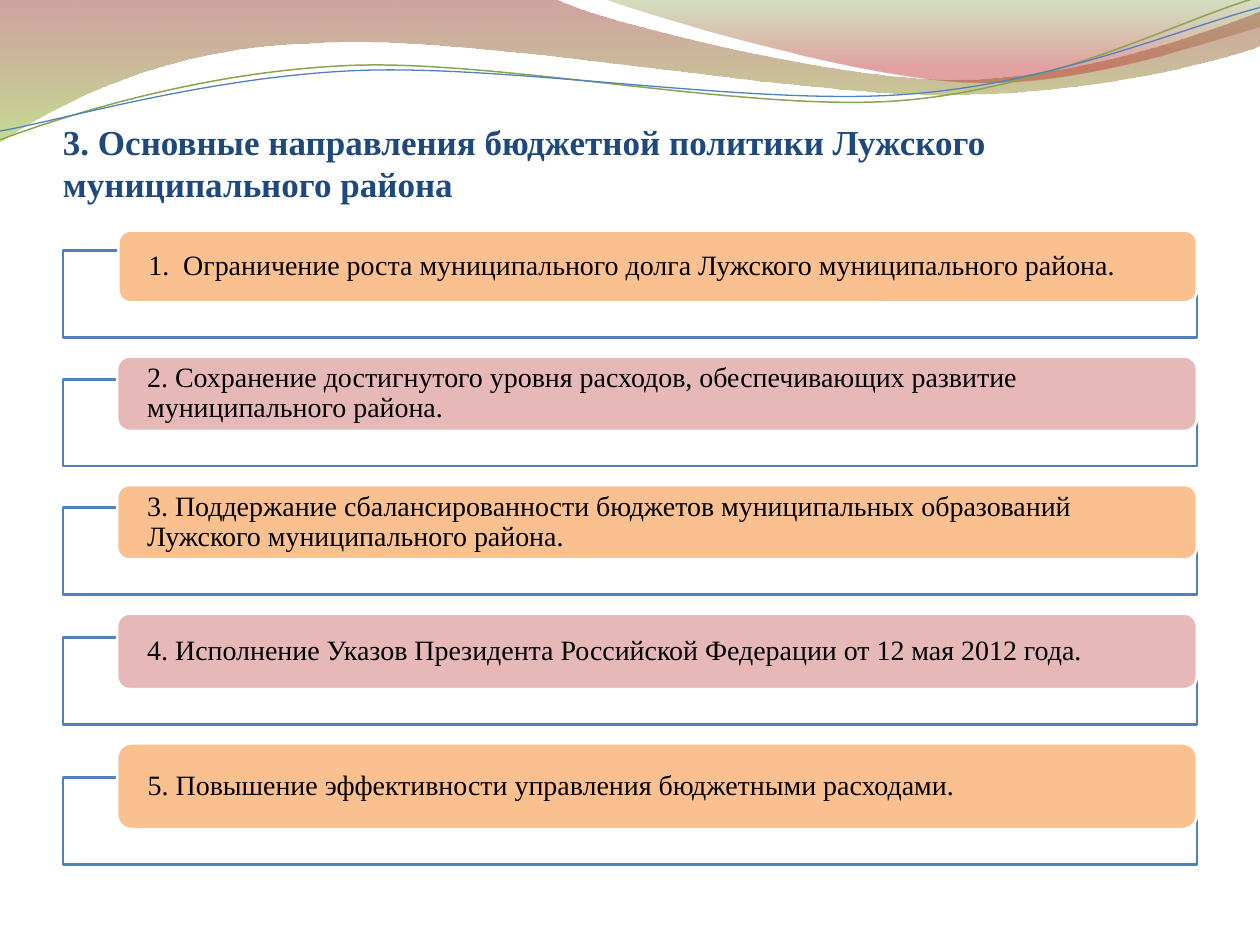
from math import cos, radians, sin

from lxml.etree import SubElement
from pptx import Presentation
from pptx.dml.color import RGBColor
from pptx.enum.shapes import MSO_SHAPE
from pptx.enum.text import MSO_ANCHOR, PP_ALIGN
from pptx.oxml.ns import qn
from pptx.util import Inches, Pt

FONT = "Times New Roman"
NAVY = RGBColor(0x1F, 0x49, 0x7D)
BLUE = RGBColor(0x4F, 0x81, 0xBD)
GREEN = RGBColor(0x89, 0xA5, 0x4F)
ORANGE = RGBColor(0xFA, 0xC0, 0x90)
PINK = RGBColor(0xE6, 0xB9, 0xB8)
WHITE = RGBColor(0xFF, 0xFF, 0xFF)
BLACK = RGBColor(0, 0, 0)

# Gradient stops: position in percent, colour, opacity in percent
LEFT_WAVE_STOPS = [(0, RGBColor(0x97, 0x33, 0x30), 45), (100, RGBColor(0x95, 0xC2, 0x38), 55)]
RIGHT_WAVE_STOPS = [(0, RGBColor(0x76, 0x95, 0x37), 30), (80, RGBColor(0xBE, 0x33, 0x30), 45)]

# Outlines in inches: a pair is a straight step, six numbers are a Bezier step
LEFT_WAVE = [
    (0, 0), (4.4, -0.01), (4.76, 0.17, 6.64, 0.63, 7.58, 0.63),
    (8.53, 0.63, 9.58, 0.26, 10, 0.09), (10.01, 0.36),
    (9.83, 0.44, 8.7, 0.76, 7.46, 0.75), (6.22, 0.75, 3.82, 0.28, 2.57, 0.34),
    (1.29, 0.36, 0.46, 0.83, -0.01, 1.13),
]
RIGHT_WAVE = [
    (4.79, -0.01), (5.09, 0.11, 6.82, 0.62, 7.69, 0.65),
    (8.56, 0.69, 9.61, 0.32, 10, 0.21), (10, 0),
]
GREEN_CURVE = [
    (0, 1.11), (0.48, 0.93, 1.58, 0.57, 2.77, 0.52),
    (3.95, 0.47, 5.93, 0.89, 7.13, 0.8), (8.33, 0.71, 9.38, 0.15, 9.98, -0.02),
]
BLUE_CURVE = [
    (0, 1.04), (0.47, 0.96, 1.64, 0.61, 2.83, 0.56),
    (4.03, 0.51, 5.97, 0.84, 7.17, 0.75), (8.36, 0.67, 9.41, 0.21, 10, 0.06),
]
CURVE_TILT = -2.7
CURVE_CENTER = (4.99, 0.58)

TITLE = "3. Основные направления бюджетной политики Лужского муниципального района"
# Card left, height, colour and wording
DIRECTIONS = [
    (0.94, 0.57, ORANGE, "1.  Ограничение роста муниципального долга Лужского муниципального района."),
    (0.93, 0.59, PINK, "2. Сохранение достигнутого уровня расходов, обеспечивающих развитие муниципального района."),
    (0.93, 0.59, ORANGE, "3. Поддержание сбалансированности бюджетов муниципальных образований Лужского муниципального района."),
    (0.93, 0.6, PINK, "4. Исполнение Указов Президента Российской Федерации от 12 мая 2012 года."),
    (0.93, 0.68, ORANGE, "5. Повышение эффективности управления бюджетными расходами."),
]
CARD_RIGHT = 9.5
FIRST_CARD_TOP = 1.83
FRAME_HEIGHT = 0.69
CARD_OVERLAP = 0.41
DIRECTION_GAP = 0.15


def pairs(step):
    return list(zip(step[::2], step[1::2]))


def turn(outline, degrees):
    """Rotate an outline about the centre of the curves."""
    cosine, sine = cos(radians(degrees)), sin(radians(degrees))
    center_x, center_y = CURVE_CENTER
    turned = []
    for step in outline:
        offsets = [(x - center_x, y - center_y) for x, y in pairs(step)]
        turned.append([value for x, y in offsets for value in
                       (center_x + x * cosine - y * sine, center_y + x * sine + y * cosine)])
    return turned


def add_outline(slide, outline, close):
    """Build a freeform through the step ends, then bend its Bezier steps."""
    start, *ends = [(Inches(step[-2]), Inches(step[-1])) for step in outline]
    builder = slide.shapes.build_freeform(*start)
    builder.add_line_segments(ends, close=close)
    shape = builder.convert_to_shape()
    shape.shadow.inherit = False
    lines = shape._element.findall(".//" + qn("a:lnTo"))
    for line, step in zip(lines, outline[1:]):
        if len(step) == 6:
            line.tag = qn("a:cubicBezTo")
            for point in list(line):
                line.remove(point)
            for x, y in pairs(step):
                SubElement(line, qn("a:pt"), x=str(Inches(x) - shape.left), y=str(Inches(y) - shape.top))
    return shape


def add_wave(slide, outline, stops):
    wave = add_outline(slide, outline, close=True)
    wave.line.fill.background()
    wave.fill.gradient()
    gradient = wave._element.spPr.find(qn("a:gradFill"))
    for child in list(gradient):
        gradient.remove(child)
    stop_list = SubElement(gradient, qn("a:gsLst"))
    for position, color, opacity in stops:
        stop = SubElement(stop_list, qn("a:gs"), pos=str(position * 1000))
        tint = SubElement(stop, qn("a:srgbClr"), val=str(color))
        SubElement(tint, qn("a:alpha"), val=str(opacity * 1000))
    SubElement(gradient, qn("a:lin"), ang="5400000", scaled="0")


def add_curve(slide, outline, color, width):
    curve = add_outline(slide, turn(outline, -CURVE_TILT), close=False)
    curve.rotation = CURVE_TILT
    curve.fill.background()
    curve.line.color.rgb = color
    curve.line.width = Pt(width)


def add_panel(slide, kind, left, top, width, height, fill, line):
    panel = slide.shapes.add_shape(kind, Inches(left), Inches(top), Inches(width), Inches(height))
    panel.shadow.inherit = False
    panel.fill.solid()
    panel.fill.fore_color.rgb = fill
    panel.line.color.rgb = line
    panel.line.width = Pt(1.5)
    return panel


def write(shape, text, size, color, anchor, margins, bold=False):
    """Fill a shape with left-aligned text; margins are left, top, right, bottom."""
    frame = shape.text_frame
    frame.word_wrap = True
    frame.vertical_anchor = anchor
    frame.margin_left, frame.margin_top, frame.margin_right, frame.margin_bottom = map(Inches, margins)
    frame.text = text
    para = frame.paragraphs[0]
    para.alignment = PP_ALIGN.LEFT
    font = para.runs[0].font
    font.name, font.size, font.bold = FONT, Pt(size), bold
    font.color.rgb = color
    return para


def add_direction(slide, left, top, height, color, text):
    """Add a frame with a card over its upper edge; return the frame's bottom."""
    frame_top = top + height - CARD_OVERLAP
    add_panel(slide, MSO_SHAPE.RECTANGLE, 0.5, frame_top, 9, FRAME_HEIGHT, WHITE, BLUE)
    card = add_panel(slide, MSO_SHAPE.ROUNDED_RECTANGLE, left, top, CARD_RIGHT - left, height, color, WHITE)
    para = write(card, text, 16, BLACK, MSO_ANCHOR.MIDDLE, (0.21, 0, 0.21, 0))
    para.line_spacing = 0.9
    return frame_top + FRAME_HEIGHT


def main():
    deck = Presentation()
    deck.slide_width, deck.slide_height = Inches(10), Inches(7.5)
    slide = deck.slides.add_slide(deck.slide_layouts[6])

    add_wave(slide, LEFT_WAVE, LEFT_WAVE_STOPS)
    add_wave(slide, RIGHT_WAVE, RIGHT_WAVE_STOPS)
    add_curve(slide, GREEN_CURVE, GREEN, 0.85)
    add_curve(slide, BLUE_CURVE, BLUE, 0.75)

    title = slide.shapes.add_textbox(Inches(0.5), Inches(0.77), Inches(9), Inches(0.85))
    write(title, TITLE, 20, NAVY, MSO_ANCHOR.BOTTOM, (0, 0.05, 0, 0), bold=True)

    top = FIRST_CARD_TOP
    for left, height, color, text in DIRECTIONS:
        top = add_direction(slide, left, top, height, color, text) + DIRECTION_GAP

    deck.save("out.pptx")


if __name__ == "__main__":
    main()
